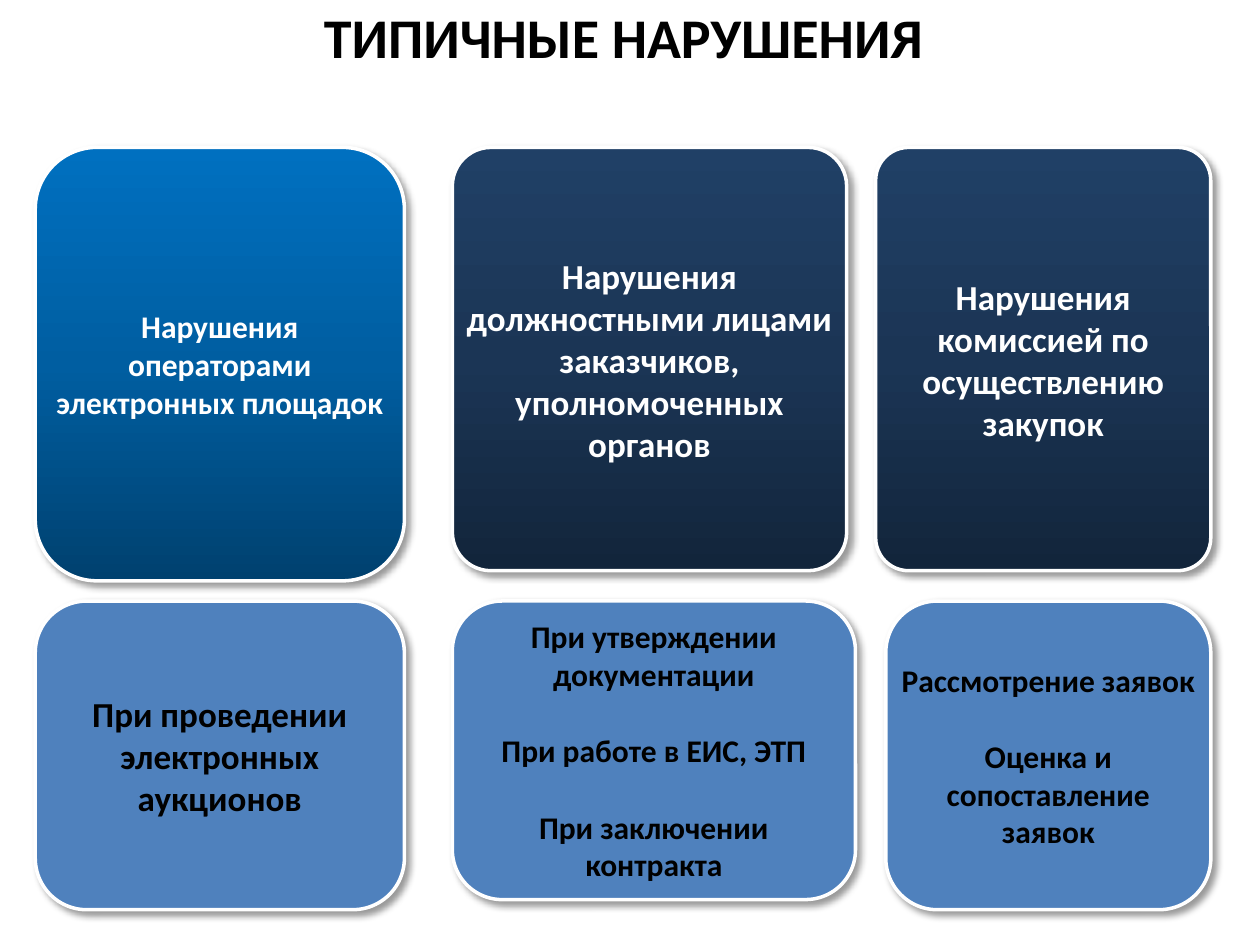
from copy import deepcopy

from lxml import etree
from pptx import Presentation
from pptx.dml.color import RGBColor
from pptx.enum.shapes import MSO_SHAPE as Shape
from pptx.enum.text import MSO_ANCHOR as Anchor, PP_ALIGN as Align
from pptx.oxml.ns import qn
from pptx.util import Inches, Pt

WHITE, BLACK, BLUE = "FFFFFF", "000000", "4F81BD"
BRIGHT = ("00416F", "005EA1", "0070C0")  # from the bottom up
NAVY = ("12253B", "1B3555", "204066")
TOP_ROW, BOTTOM_ROW = 1.17, 4.77
ROUND, SLIGHT = 0.167, 0.098  # corner radius as a share of the short side

# left, top, width, height, corner, fill, text colour, text size, paragraphs
CARDS = [
    (0.28, TOP_ROW, 2.93, 3.44, ROUND, BRIGHT, WHITE, 18,
     ["Нарушения операторами электронных площадок"]),
    (3.59, TOP_ROW, 3.13, 3.36, SLIGHT, NAVY, WHITE, 20,
     ["Нарушения должностными лицами заказчиков, уполномоченных органов"]),
    (6.95, TOP_ROW, 2.66, 3.36, SLIGHT, NAVY, WHITE, 20,
     ["Нарушения комиссией по осуществлению закупок"]),
    (0.28, BOTTOM_ROW, 2.93, 2.45, ROUND, BLUE, BLACK, 20,
     ["При проведении электронных аукционов"]),
    (3.59, BOTTOM_ROW, 3.2, 2.37, ROUND, BLUE, BLACK, 18,
     ["При утверждении документации", "При работе в ЕИС, ЭТП",
      "При заключении контракта"]),
    (7.03, BOTTOM_ROW, 2.58, 2.45, ROUND, BLUE, BLACK, 18,
     ["Рассмотрение заявок", "Оценка и сопоставление заявок"]),
]


def color(value):
    return RGBColor.from_string(value)


def write(box, texts, size, text_color):
    """Centred bold paragraphs, one line apart."""
    frame = box.text_frame
    frame_format = {"word_wrap": True, "vertical_anchor": Anchor.MIDDLE,
                    "margin_left": 0, "margin_right": 0,
                    "margin_top": 0, "margin_bottom": 0}
    for name, value in frame_format.items():
        setattr(frame, name, value)
    for index, text in enumerate(texts):
        para = frame.add_paragraph() if index else frame.paragraphs[0]
        para.alignment = Align.CENTER
        para.space_before = Pt(size * 1.22 if index else 0)
        span = para.add_run()
        span.text = text
        font_format = {"name": "Calibri", "size": Pt(size), "bold": True}
        for name, value in font_format.items():
            setattr(span.font, name, value)
        span.font.color.rgb = color(text_color)


def fill_gradient(box, colors):
    """Evenly spaced stops running from the bottom to the top."""
    box.fill.gradient()
    box.fill.gradient_angle = 90
    stop_list = box._element.spPr.find(qn("a:gradFill")).find(qn("a:gsLst"))
    stop_list.insert(1, deepcopy(stop_list[0]))
    for index, (stop, value) in enumerate(zip(box.fill.gradient_stops, colors)):
        stop.color.rgb = color(value)
        stop.position = index / (len(colors) - 1)


def add_shadow(box):
    box.shadow.inherit = False
    effects = box._element.spPr.find(qn("a:effectLst"))
    shadow = etree.SubElement(effects, qn("a:outerShdw"), blurRad=str(Pt(4)),
                              dist=str(Pt(3)), dir="2700000", rotWithShape="0")
    tone = etree.SubElement(shadow, qn("a:srgbClr"), val=BLACK)
    etree.SubElement(tone, qn("a:alpha"), val="40000")


def add_card(page, left, top, width, height, corner, fill, text_color, size, texts):
    box = page.shapes.add_shape(Shape.ROUNDED_RECTANGLE, Inches(left), Inches(top),
                                Inches(width), Inches(height))
    box.adjustments[0] = corner
    if isinstance(fill, tuple):
        fill_gradient(box, fill)
    else:
        box.fill.solid()
        box.fill.fore_color.rgb = color(fill)
    box.line.color.rgb = color(WHITE)
    box.line.width = Pt(2)
    add_shadow(box)
    write(box, texts, size, text_color)


def add_title(page, text, width):
    title = page.shapes.title
    place = {"left": 0, "top": Inches(0.03), "width": width, "height": Inches(0.51)}
    for name, value in place.items():
        setattr(title, name, value)
    write(title, [text], 32, BLACK)


def main():
    deck = Presentation()
    deck.slide_width, deck.slide_height = Inches(10), Inches(7.5)
    page = deck.slides.add_slide(deck.slide_layouts[5])  # Title Only
    add_title(page, "ТИПИЧНЫЕ НАРУШЕНИЯ ", deck.slide_width)
    for card in CARDS:
        add_card(page, *card)
    deck.save("out.pptx")


if __name__ == "__main__":
    main()
